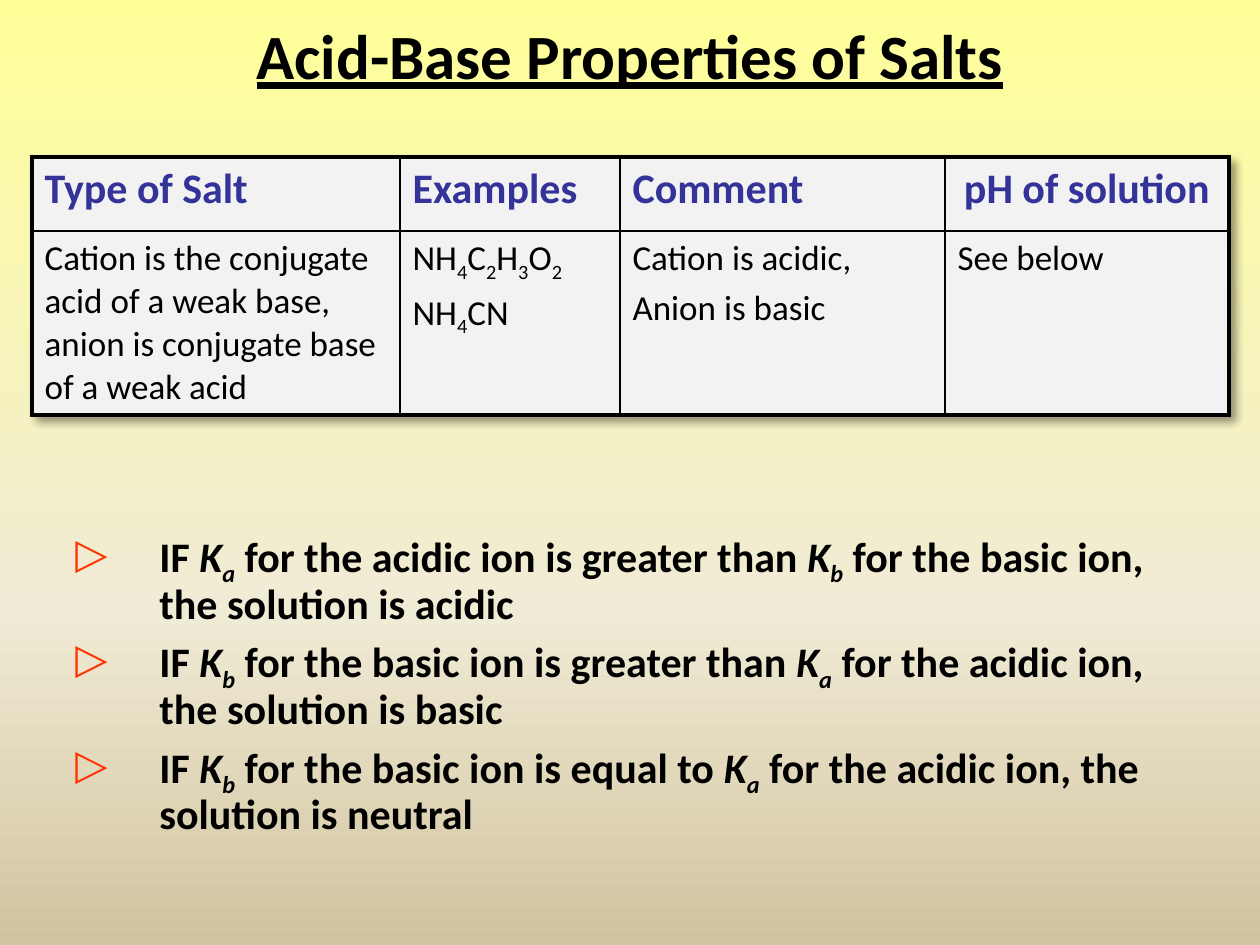
from itertools import cycle

from pptx import Presentation
from pptx import util as u
from pptx.dml.color import RGBColor
from pptx.enum import text
from pptx.oxml import parse_xml
from pptx.oxml.ns import nsdecls, qn

PX = 914400 // 126
FONT = "Calibri"
BLACK, BLUE, RED, GRAY = "000000", "333399", "FF3300", "F2F2F2"
PLAIN, SUB = {}, {"sub": True}
ITALIC, ITALIC_SUB = {"italic": True}, {"italic": True, "sub": True}

HEADERS = ["Type of Salt", "Examples", "Comment", "pH of solution"]
DETAILS = [
    ["Cation is the conjugate acid of a weak base, "
     "anion is conjugate base of a weak acid"],
    ["NH|4|C|2|H|3|O|2", "NH|4|CN"],
    ["Cation is acidic,", "Anion is basic"],
    ["See below"],
]
RULES = [
    "IF |K|a| for the acidic ion is greater than |K|b"
    "| for the basic ion, the solution is acidic",
    "IF |K|b| for the basic ion is greater than |K|a"
    "| for the acidic ion, the solution is basic",
    "IF |K|b| for the basic ion is equal to |K|a"
    "| for the acidic ion, the solution is neutral",
]


def px(n):
    return u.Emu(n * PX)


def rgb(color):
    return RGBColor.from_string(color)


def xml(tag, attrs="", inner=""):
    return parse_xml(f'<a:{tag} {nsdecls("a")} {attrs}>{inner}</a:{tag}>')


def solid(color):
    return f'<a:solidFill><a:srgbClr val="{color}"/></a:solidFill>'


def add_runs(p, marked, styles, size, color, bold):
    for part, style in zip(marked.split("|"), cycle(styles)):
        r = p.add_run()
        r.text = part
        r.font.name, r.font.size, r.font.bold = FONT, u.Pt(size), bold
        r.font.color.rgb = rgb(color)
        if style.get("italic"):
            r.font.italic = True
        if style.get("sub"):
            r.font._element.set("baseline", "-25000")


def add_paragraphs(tf, lines, styles, size, color=BLACK, bold=False):
    for i, line in enumerate(lines):
        p = tf.add_paragraph() if i else tf.paragraphs[0]
        p._p.get_or_add_pPr().append(
            xml("spcBef", inner='<a:spcPct val="20000"/>'))
        add_runs(p, line, styles, size, color, bold)


def set_background(s, stops):
    s.background.fill.solid()
    gs = "".join(f'<a:gs pos="{pos * 1000}"><a:srgbClr val="{color}"/></a:gs>'
                 for pos, color in stops)
    bg = s._element.cSld.find(qn("p:bg")).find(qn("p:bgPr"))
    bg.replace(bg.find(qn("a:solidFill")),
               xml("gradFill", 'rotWithShape="1"',
                   f'<a:gsLst>{gs}</a:gsLst><a:lin ang="5400000" scaled="0"/>'))


def add_textbox(s, x, y, w, h):
    tf = s.shapes.add_textbox(px(x), px(y), px(w), px(h)).text_frame
    tf.word_wrap = True
    return tf


def add_title(s, title):
    tf = add_textbox(s, 63, -1, 1134, 110)
    tf.vertical_anchor = text.MSO_ANCHOR.MIDDLE
    p = tf.paragraphs[0]
    p.alignment = text.PP_ALIGN.CENTER
    add_runs(p, title, [PLAIN], 36, BLACK, True)
    p.runs[0].font.underline = True


def format_cell(cell, outer):
    cell.fill.solid()
    cell.fill.fore_color.rgb = rgb(GRAY)
    tcPr = cell._tc.tcPr
    for i, side in enumerate("LRTB"):
        width = u.Pt(2.25 if side in outer else 1)
        tcPr.insert(i, xml(f"ln{side}", f'w="{width}"', solid(BLACK)))


def add_salt_table(s):
    widths, heights = [368, 220, 325, 284], [74, 184]
    frame = s.shapes.add_table(2, 4, px(32), px(157),
                               px(sum(widths)), px(sum(heights)))
    table = frame.table
    table.first_row = table.horz_banding = False
    table._tbl.tblPr.insert(0, xml(
        "effectLst", inner='<a:outerShdw blurRad="50800" dist="38100" '
        'dir="2700000" algn="tl" rotWithShape="0"><a:srgbClr val="000000">'
        '<a:alpha val="40000"/></a:srgbClr></a:outerShdw>'))
    for row, h in zip(table.rows, heights):
        row.height = px(h)
    for c, (w, header, details) in enumerate(zip(widths, HEADERS, DETAILS)):
        table.columns[c].width = px(w)
        edge = {0: "L", 3: "R"}.get(c, "")
        head, body = table.cell(0, c), table.cell(1, c)
        format_cell(head, edge + "T")
        format_cell(body, edge + "B")
        add_paragraphs(head.text_frame, [header], [PLAIN], 24, BLUE, True)
        add_paragraphs(body.text_frame, details, [PLAIN, SUB], 20)
    table.cell(0, 3).text_frame.paragraphs[0].alignment = text.PP_ALIGN.CENTER


def add_rules(s):
    tf = add_textbox(s, 63, 525, 1134, 315)
    add_paragraphs(tf, RULES, [PLAIN, ITALIC, ITALIC_SUB], 24, bold=True)
    for p in tf.paragraphs:
        p.line_spacing = 0.9
        pPr = p._p.pPr
        pPr.set("marL", str(px(84)))
        pPr.set("indent", str(px(-84)))
        pPr.append(xml("buClr", inner=f'<a:srgbClr val="{RED}"/>'))
        pPr.append(xml("buFont", f'typeface="{FONT}"'))
        pPr.append(xml("buChar", 'char="▷"'))


def main():
    prs = Presentation()
    prs.slide_width, prs.slide_height = px(1260), px(945)
    s = prs.slides.add_slide(prs.slide_layouts[6])
    set_background(s, [(0, "FFFF99"), (65, "F0EBD5"), (100, "D1C39F")])
    add_title(s, "Acid-Base Properties of Salts")
    add_salt_table(s)
    add_rules(s)
    prs.save("out.pptx")


if __name__ == "__main__":
    main()
